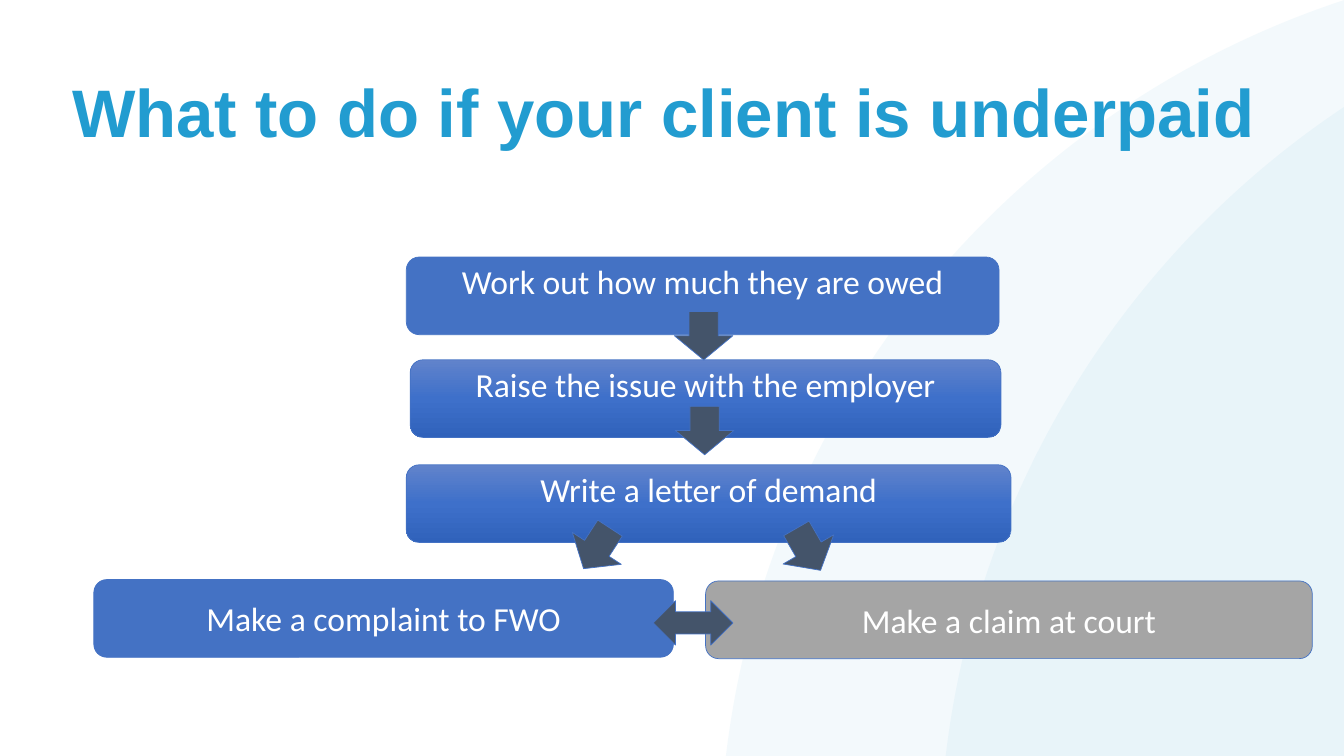
from copy import deepcopy
from dataclasses import dataclass, field
from typing import Optional, Union

from lxml.etree import SubElement
from pptx import Presentation
from pptx.dml.color import RGBColor as Color
from pptx.enum.shapes import MSO_SHAPE as Preset
from pptx.enum.text import MSO_ANCHOR as Anchor, PP_ALIGN as Align
from pptx.oxml.ns import qn
from pptx.shapes.autoshape import Shape
from pptx.slide import Slide
from pptx.util import Pt


@dataclass(frozen=True)
class Theme:
    """Colours, fonts and sizes of the slide."""
    accent: str = "229CD0"
    blue: str = "4472C4"
    gradient: tuple[str, ...] = ("6183CB", "3E70CA", "3062BB")
    grey: str = "A5A5A5"
    arrow: str = "44546A"
    white: str = "FFFFFF"
    title_format: dict = field(default_factory=lambda: {"name": "Arial", "size": Pt(48), "bold": True})
    step_format: dict = field(default_factory=lambda: {"name": "Calibri", "size": Pt(24)})
    outline: float = 0.5
    veil_alpha: int = 5000


THEME = Theme()
Fill = Union[str, tuple[str, ...]]


@dataclass(frozen=True)
class Box:
    """A place on the slide, in points."""
    left: float
    top: float
    width: float
    height: float

    def lengths(self) -> tuple[Pt, ...]:
        """Return the four lengths that python-pptx expects."""
        return Pt(self.left), Pt(self.top), Pt(self.width), Pt(self.height)


@dataclass(frozen=True)
class Step:
    """One step of the procedure."""
    text: str
    box: Box
    fill: Fill
    anchor: Anchor = Anchor.TOP


@dataclass(frozen=True)
class Arrow:
    """A block arrow between steps."""
    box: Box
    rotation: float = 0
    preset: Preset = Preset.RIGHT_ARROW


STEP_HEIGHT = 55.5
VEIL_SIZE = 1297.5
VEIL_LEFTS = (514, 671)
TITLE = "What to do if your client is underpaid"
TITLE_BOX = Box(25.2, 49.7, 898.6, 87.8)
STEPS = (
    Step("Work out how much they are owed", Box(290.2, 183.6, 423.4, STEP_HEIGHT), THEME.blue),
    Step("Raise the issue with the employer", Box(293, 257, 422, STEP_HEIGHT), THEME.gradient),
    Step("Write a letter of demand", Box(290.2, 332, 432, STEP_HEIGHT), THEME.gradient),
    Step("Make a complaint to FWO", Box(67, 414, 414, STEP_HEIGHT), THEME.blue, Anchor.MIDDLE),
    Step("Make a claim at court", Box(504, 415, 433.4, STEP_HEIGHT), THEME.grey, Anchor.MIDDLE),
)
ARROWS = (
    Arrow(Box(485.3, 218.9, 34.6, 41.8), 90),
    Arrow(Box(486, 286.6, 34.6, 41.8), 90),
    Arrow(Box(409, 370.8, 34.6, 41.8), 123.1),
    Arrow(Box(560.2, 371.5, 34.6, 41.8), 60),
    Arrow(Box(466.6, 429.1, 56.9, 31.7), preset=Preset.LEFT_RIGHT_ARROW),
)


def paint(shape: Shape, fill: Fill) -> None:
    """Fill a shape with one colour or with an even vertical gradient."""
    if isinstance(fill, str):
        shape.fill.solid()
        shape.fill.fore_color.rgb = Color.from_string(fill)
        return
    shape.fill.gradient()
    shape.fill.gradient_angle = 270
    stop_list = next(shape.element.iter(qn("a:gsLst")))
    while len(stop_list) < len(fill):
        stop_list.append(deepcopy(stop_list[0]))
    for index, stop in enumerate(shape.fill.gradient_stops):
        stop.position = index / (len(fill) - 1)
        stop.color.rgb = Color.from_string(fill[index])


def add_preset(slide: Slide, preset: Preset, box: Box, fill: Fill, line: Optional[str] = None) -> Shape:
    """Add a flat preset shape, outlined when a line colour is given."""
    shape = slide.shapes.add_shape(preset, *box.lengths())
    shape.shadow.inherit = False
    paint(shape, fill)
    if line is None:
        shape.line.fill.background()
    else:
        shape.line.color.rgb = Color.from_string(line)
        shape.line.width = Pt(THEME.outline)
    return shape


def write(shape: Shape, text: str, font_format: dict, color: str, frame_format: dict) -> None:
    """Write one centred paragraph into a shape."""
    frame = shape.text_frame
    for name, value in {"word_wrap": True, **frame_format}.items():
        setattr(frame, name, value)
    paragraph = frame.paragraphs[0]
    paragraph.alignment = Align.CENTER
    run = paragraph.add_run()
    run.text = text
    for name, value in font_format.items():
        setattr(run.font, name, value)
    run.font.color.rgb = Color.from_string(color)


def add_veil(slide: Slide, left: float) -> None:
    """Add a large, nearly transparent background circle."""
    veil = add_preset(slide, Preset.OVAL, Box(left, -32.4, VEIL_SIZE, VEIL_SIZE), THEME.accent)
    color = next(veil.element.spPr.iter(qn("a:srgbClr")))
    SubElement(color, qn("a:alpha")).set("val", str(THEME.veil_alpha))


def add_title(slide: Slide) -> None:
    """Add the slide title."""
    title = slide.shapes.add_textbox(*TITLE_BOX.lengths())
    write(title, TITLE, THEME.title_format, THEME.accent,
          {"vertical_anchor": Anchor.TOP, "margin_top": Pt(7)})
    title.text_frame.paragraphs[0].line_spacing = 0.9


def add_step(slide: Slide, step: Step) -> None:
    """Add one rounded step with its label."""
    shape = add_preset(slide, Preset.FLOWCHART_ALTERNATE_PROCESS, step.box, step.fill, THEME.blue)
    write(shape, step.text, THEME.step_format, THEME.white,
          {"vertical_anchor": step.anchor, "margin_top": Pt(0), "margin_bottom": Pt(0)})


def add_arrow(slide: Slide, arrow: Arrow) -> None:
    """Add one block arrow."""
    shape = add_preset(slide, arrow.preset, arrow.box, THEME.arrow, THEME.blue)
    shape.rotation = arrow.rotation


def main() -> None:
    """Build and save the presentation."""
    presentation = Presentation()
    presentation.slide_width, presentation.slide_height = Pt(960), Pt(540)
    slide = presentation.slides.add_slide(presentation.slide_layouts[6])
    for left in VEIL_LEFTS:
        add_veil(slide, left)
    add_title(slide)
    for step in STEPS:
        add_step(slide, step)
    for arrow in ARROWS:
        add_arrow(slide, arrow)
    presentation.save("out.pptx")


if __name__ == "__main__":
    main()
